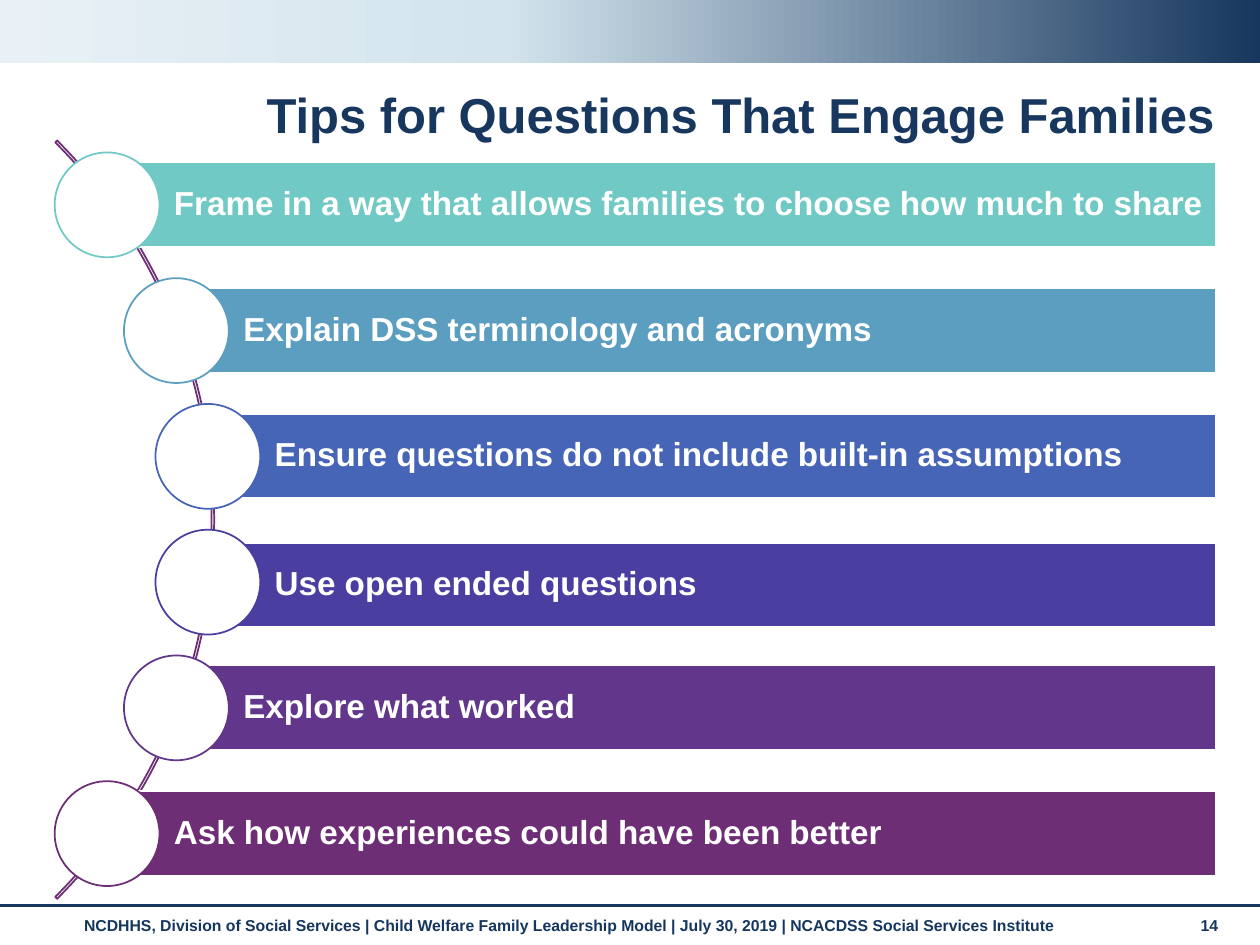
import copy

import pptx
import pptx.dml.color
import pptx.enum.shapes
import pptx.enum.text
import pptx.oxml.ns
import pptx.oxml.xmlchemy
import pptx.util

Pt = pptx.util.Pt
KIND = pptx.enum.shapes.MSO_SHAPE
ALIGN = pptx.enum.text.PP_ALIGN
ANCHOR = pptx.enum.text.MSO_ANCHOR

HUES = {
    "white": "FFFFFF",
    "navy": "17375E",
    "ink": "15365E",
    "sky": "D3E4ED",
    "mist": "E9F1F6",
    "teal": "71C9C5",
    "blue": "5B9EC0",
    "royal": "4765B7",
    "indigo": "4A3EA1",
    "violet": "61368B",
    "plum": "6D2E75",
}

TIPS = [
    ("Frame in a way that allows families to choose how much to share", "teal", 61.2, 0),
    ("Explain DSS terminology and acronyms", "blue", 100.8, 0),
    ("Ensure questions do not include built-in assumptions", "royal", 118.8, 0),
    ("Use open ended questions", "indigo", 118.8, 1.8),
    ("Explore what worked", "violet", 100.8, 0),
    ("Ask how experiences could have been better", "plum", 61.2, 0),
]

FOOTER = ("NCDHHS, Division of Social Services | Child Welfare Family Leadership Model"
          " | July 30, 2019 | NCACDSS Social Services Institute")

RIGHT = 694.8
TOP = 87.1
STEP = 71.86
DISC = 59.9
BAR = 48.2


def tint(name):
    return pptx.dml.color.RGBColor.from_string(HUES[name])


def write(frame, text, size, hue, align=ALIGN.LEFT, anchor=ANCHOR.TOP, space=None):
    frame.text = text
    frame.word_wrap = True
    frame.auto_size = pptx.enum.text.MSO_AUTO_SIZE.NONE
    frame.vertical_anchor = anchor
    para = frame.paragraphs[0]
    para.alignment = align
    para.line_spacing = space
    font = para.runs[0].font
    font.name = "Arial"
    font.size = Pt(size)
    font.bold = True
    font.color.rgb = tint(hue)


def add_shape(slide, kind, left, top, width, height, fill=None, line=None):
    shape = slide.shapes.add_shape(kind, Pt(left), Pt(top), Pt(width), Pt(height))
    shape.shadow.inherit = False
    if fill:
        shape.fill.solid()
        shape.fill.fore_color.rgb = tint(fill)
    else:
        shape.fill.background()
    if line:
        shape.line.color.rgb = tint(line)
        shape.line.width = Pt(1)
    else:
        shape.line.fill.background()
    return shape


def add_band(slide):
    band = add_shape(slide, KIND.RECTANGLE, 0, 0, 720, 36)
    band.fill.gradient()
    band.fill.gradient_angle = 180
    stops = band._element.spPr.find(".//" + pptx.oxml.ns.qn("a:gsLst"))
    stops.append(copy.deepcopy(stops[1]))
    marks = [("navy", 0), ("sky", 0.6), ("mist", 1)]
    for stop, (hue, place) in zip(band.fill.gradient_stops, marks):
        stop.color.rgb = tint(hue)
        stop.position = place


def add_rule(slide):
    rule = slide.shapes.add_connector(
        pptx.enum.shapes.MSO_CONNECTOR.STRAIGHT, 0, Pt(517.7), Pt(720), Pt(517.7))
    rule.line.color.rgb = tint("navy")
    rule.line.width = Pt(1.75)
    rule._element.spPr.append(pptx.oxml.xmlchemy.OxmlElement("a:effectLst"))


def add_note(slide, text, left, width):
    box = slide.shapes.add_textbox(Pt(left), Pt(519.8), Pt(width), Pt(21))
    write(box.text_frame, text, 9, "ink")


def add_title(slide, text):
    title = slide.shapes.title
    title.left, title.top = Pt(-18.7), Pt(45.4)
    title.width, title.height = Pt(720), Pt(43.2)
    write(title.text_frame, text, 28, "navy", ALIGN.RIGHT, ANCHOR.MIDDLE, 0.9)


def add_arc(slide):
    arc = add_shape(slide, KIND.BLOCK_ARC, -490.3, -9.4, 612.7, 612.7, line="plum")
    for index, value in enumerate([189, 27, 0.0025]):
        arc.adjustments[index] = value


def add_tip(slide, row, text, hue, left, nudge):
    top = TOP + row * STEP
    bar = add_shape(slide, KIND.RECTANGLE, left, top + 5.8 + nudge,
                    RIGHT - left, BAR, hue, "white")
    frame = bar.text_frame
    frame.margin_left = Pt(38.2)
    frame.margin_right = frame.margin_top = frame.margin_bottom = Pt(3.6)
    write(frame, text, 19, "white", anchor=ANCHOR.MIDDLE, space=0.9)
    add_shape(slide, KIND.OVAL, left - DISC / 2, top, DISC, DISC, "white", hue)


def main():
    deck = pptx.Presentation()
    deck.slide_width, deck.slide_height = Pt(720), Pt(540)
    slide = deck.slides.add_slide(deck.slide_layouts[5])
    add_note(slide, FOOTER, 41, 629.3)
    add_note(slide, "14", 679, 31.7)
    add_band(slide)
    add_rule(slide)
    add_title(slide, "Tips for Questions That Engage Families")
    add_arc(slide)
    for row, tip in enumerate(TIPS):
        add_tip(slide, row, *tip)
    deck.save("out.pptx")


if __name__ == "__main__":
    main()
